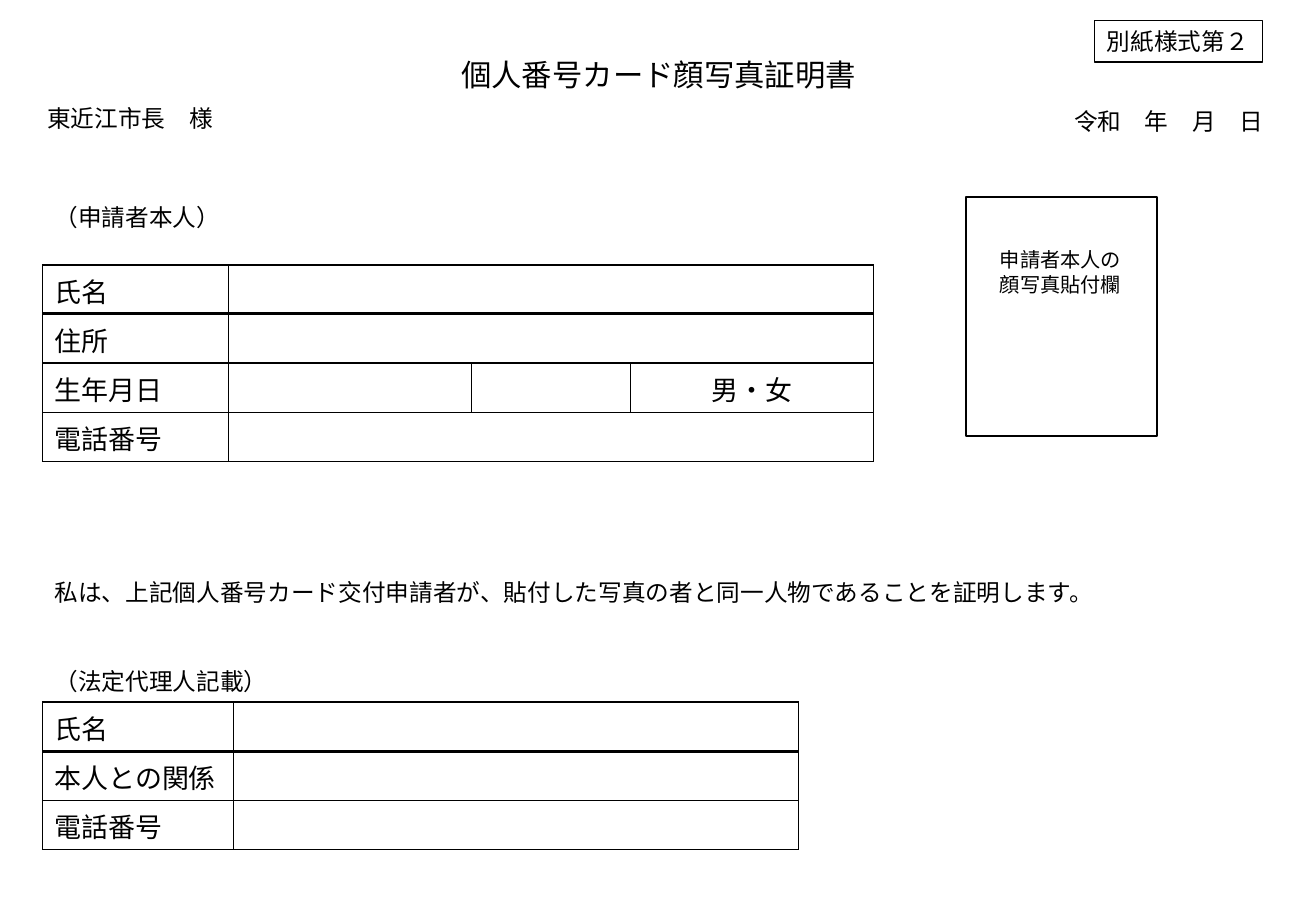
from lxml import etree
from pptx import Presentation
from pptx.dml.color import RGBColor
from pptx.enum.shapes import MSO_SHAPE as SHAPE
from pptx.enum.text import MSO_ANCHOR as ANCHOR, MSO_AUTO_SIZE as AUTO, PP_ALIGN as AL
from pptx.oxml.ns import qn
from pptx.util import Pt

PX = 4572  # 200 px to the inch
FONT = "Noto Sans CJK JP"
BLACK, WHITE = "000000", "FFFFFF"


def rgb(code):
    return RGBColor.from_string(code)


def write(tf, lines, size, align=AL.LEFT, anchor=ANCHOR.TOP):
    tf.word_wrap = True
    tf.vertical_anchor = anchor
    for i, line in enumerate(lines):
        p = tf.add_paragraph() if i else tf.paragraphs[0]
        p.alignment = align
        r = p.add_run()
        r.text = line
        r.font.size = Pt(size)
        r.font.name = FONT
        r.font.color.rgb = rgb(BLACK)
        etree.SubElement(r.font._element, qn("a:ea")).set("typeface", FONT)


prs = Presentation()
prs.slide_width, prs.slide_height = 2166 * PX, 1500 * PX
s = prs.slides.add_slide(prs.slide_layouts[5])

# Title
title = s.shapes.title
title.left, title.top, title.width, title.height = 730 * PX, 82 * PX, 708 * PX, 80 * PX
title.text_frame.auto_size = AUTO.NONE
write(title.text_frame, ["個人番号カード顔写真証明書"], 18, AL.CENTER)

# Text lines: left, top, width, height, size, paragraphs
texts = [
    (58, 162, 708, 68, 14, ["東近江市長　様"]),
    (1748, 166, 382, 68, 14, ["令和　年　月　日"]),
    (70, 324, 1234, 68, 14, ["（申請者本人）"]),
    (1626, 398, 244, 100, 12, ["申請者本人の", "顔写真貼付欄"]),
    (70, 942, 1812, 114, 14,
     ["私は、上記個人番号カード交付申請者が、貼付した写真の者と同一人物であることを証明します。"]),
    (70, 1088, 1234, 68, 14, ["（法定代理人記載）"]),
]
for x, y, w, h, size, lines in texts:
    sp = s.shapes.add_textbox(x * PX, y * PX, w * PX, h * PX)
    write(sp.text_frame, lines, size)

# Form number and photo frame: left, top, width, height, line width, paragraphs
boxes = [
    (1802, 34, 276, 68, 0.75, ["別紙様式第２"]),
    (1590, 324, 314, 394, 1, []),
]
for x, y, w, h, weight, lines in boxes:
    sp = s.shapes.add_shape(SHAPE.RECTANGLE, x * PX, y * PX, w * PX, h * PX)
    sp.shadow.inherit = False
    sp.fill.background()
    sp.line.color.rgb = rgb(BLACK)
    sp.line.width = Pt(weight)
    write(sp.text_frame, lines, 14)

# Applicant and legal representative tables: top, column widths, rows
ROW_H = 81
tables = [
    (436, [306, 400, 262, 400],
     [["氏名"], ["住所"], ["生年月日", "", "", "男・女"], ["電話番号"]]),
    (1156, [314, 930], [["氏名"], ["本人との関係"], ["電話番号"]]),
]
for top, widths, rows in tables:
    last = len(widths) - 1
    tbl = s.shapes.add_table(len(rows), len(widths), 70 * PX, top * PX,
                             sum(widths) * PX, len(rows) * ROW_H * PX).table
    tbl.first_row = tbl.horz_banding = False
    for col, width in zip(tbl.columns, widths):
        col.width = width * PX
    for i, labels in enumerate(rows):
        tbl.rows[i].height = ROW_H * PX
        for j in range(len(widths)):
            cell = tbl.cell(i, j)
            cell.fill.solid()
            cell.fill.fore_color.rgb = rgb(WHITE)
            # Borders, with a heavier rule under the first row
            for k, side in enumerate(["lnL", "lnR", "lnT", "lnB"]):
                heavy = (i, side) in [(0, "lnB"), (1, "lnT")]
                ln = etree.Element(qn(f"a:{side}"), w=str(Pt(2 if heavy else 1)))
                fill = etree.SubElement(ln, qn("a:solidFill"))
                etree.SubElement(fill, qn("a:srgbClr"), val=BLACK)
                cell._tc.get_or_add_tcPr().insert(k, ln)
            label = labels[j] if j < len(labels) else ""
            if label:
                write(cell.text_frame, [label], 16, AL.CENTER if j else AL.LEFT)
            cell.vertical_anchor = ANCHOR.MIDDLE
        if len(labels) == 1 and last > 1:
            tbl.cell(i, 1).merge(tbl.cell(i, last))

prs.save("out.pptx")
